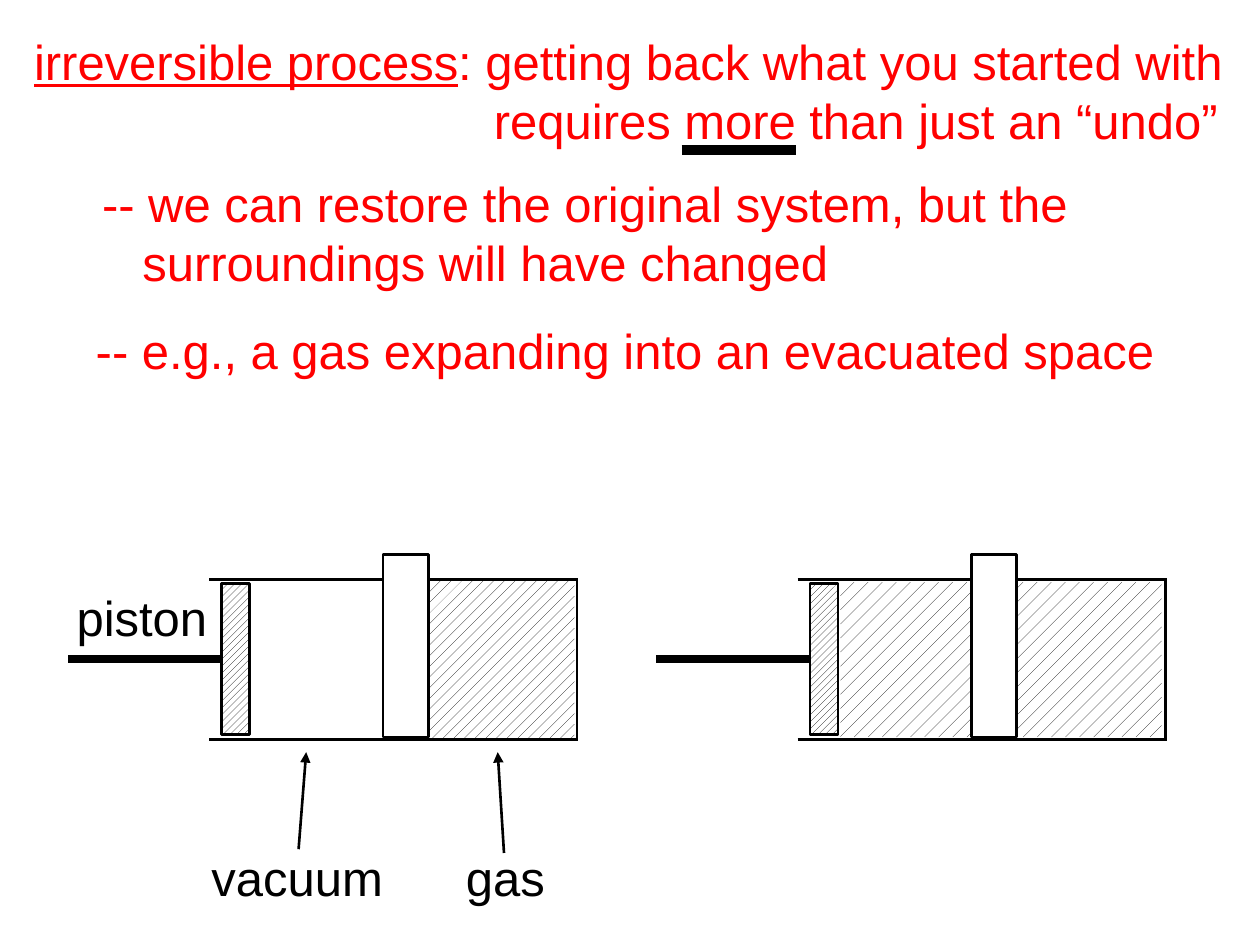
import pptx
import pptx.util
import pptx.dml.color
import pptx.enum.dml
import pptx.enum.shapes
import pptx.enum.text
import pptx.oxml.ns
import lxml.etree

RED = pptx.dml.color.RGBColor(0xFF, 0, 0)
BLACK = pptx.dml.color.RGBColor(0, 0, 0)
WHITE = pptx.dml.color.RGBColor(0xFF, 0xFF, 0xFF)
PATTERN = pptx.enum.dml.MSO_PATTERN
COLUMNS, ROWS = 100, 75
LEFT_CYLINDER, RIGHT_CYLINDER = 5.4, 52.1


def cells(n):
    return pptx.util.Inches(round(n / 10, 3))


def add_xml(parent, tag, **attributes):
    return lxml.etree.SubElement(parent, pptx.oxml.ns.qn(tag), attributes)


def style_run(r, color):
    r.font.name = "Arial"
    r.font.size = pptx.util.Pt(28)
    r.font.color.rgb = color


def fill_placeholder(sp, box, lines):
    sp.left, sp.top, sp.width, sp.height = map(cells, box)
    tf = sp.text_frame
    tf.text = "\n".join(text for text, indent in lines)
    tf.word_wrap = True
    tf.auto_size = pptx.enum.text.MSO_AUTO_SIZE.NONE
    tf.vertical_anchor = pptx.enum.text.MSO_ANCHOR.MIDDLE
    tf.margin_right = 0
    for p, (text, indent) in zip(tf.paragraphs, lines):
        p.alignment = pptx.enum.text.PP_ALIGN.LEFT
        p.space_before = pptx.util.Pt(0)
        pPr = p._p.get_or_add_pPr()
        pPr.set("marL", str(cells(indent)))
        pPr.set("indent", "0")
        add_xml(pPr, "a:buNone")
        for r in p.runs:
            style_run(r, RED)


def add_title(s):
    fill_placeholder(s.shapes.title, (1.7, 2, 96.6, 10.3), [
        ("irreversible process", 0),
        ("requires more than just an “undo”", 36.5)])
    p = s.shapes.title.text_frame.paragraphs[0]
    p.runs[0].font.underline = True
    r = p.add_run()
    r.text = ": getting back what you started with"
    style_run(r, RED)


def add_label(shapes, text, *box):
    tf = shapes.add_textbox(*map(cells, box)).text_frame
    tf.text = text
    tf.word_wrap = False
    style_run(tf.paragraphs[0].runs[0], BLACK)


def add_rect(shapes, box, pattern=None, outlined=True):
    sp = shapes.add_shape(pptx.enum.shapes.MSO_SHAPE.RECTANGLE, *map(cells, box))
    sp.shadow.inherit = False
    if pattern is None:
        sp.fill.solid()
        sp.fill.fore_color.rgb = WHITE
    else:
        sp.fill.patterned()
        sp.fill.pattern = pattern
        sp.fill.fore_color.rgb = BLACK
        sp.fill.back_color.rgb = WHITE
    if outlined:
        sp.line.color.rgb = BLACK
        sp.line.width = pptx.util.Pt(1.5)
    else:
        sp.line.fill.background()
    return sp


def add_line(shapes, ends, width=1.5, arrow=False):
    line = shapes.add_connector(
        pptx.enum.shapes.MSO_CONNECTOR.STRAIGHT, *map(cells, ends))
    line.line.color.rgb = BLACK
    line.line.width = pptx.util.Pt(width)
    if arrow:
        add_xml(line.line._get_or_add_ln(), "a:tailEnd", type="triangle")
    add_xml(line._element.spPr, "a:effectLst")
    return line


def add_cylinder(shapes, left, gas_box, gas_pattern):
    add_rect(shapes, gas_box, gas_pattern, outlined=False)
    piston = add_rect(shapes, (left + 12.2, 46.3, 2.2, 12),
                      PATTERN.WIDE_UPWARD_DIAGONAL)
    rod = add_line(shapes, (left + 12.2, 52.3, left, 52.3), width=5)
    rod.begin_connect(piston, 1)
    for row in (58.7, 46):
        add_line(shapes, (left + 11.2, row, left + 40.5, row))
    add_line(shapes, (left + 40.4, 46, left + 40.4, 58.6))
    add_rect(shapes, (left + 25, 44, 3.6, 14.5))


def main():
    prs = pptx.Presentation()
    prs.slide_width, prs.slide_height = cells(COLUMNS), cells(ROWS)
    s = prs.slides.add_slide(prs.slide_layouts[3])
    add_title(s)
    fill_placeholder(s.placeholders[1], (7.1, 13.3, 78.9, 10.3), [
        ("-- we can restore the original system, but the", 0),
        ("surroundings will have changed", 3.2)])
    fill_placeholder(s.placeholders[2], (6.6, 24.9, 87.3, 5.7), [
        ("-- e.g., a gas expanding into an evacuated space", 0)])

    before = s.shapes.add_group_shape().shapes
    add_cylinder(before, LEFT_CYLINDER, (33.3, 46.1, 12.3, 12.5),
                 PATTERN.PERCENT_20)
    add_label(before, "piston", 5.1, 46.1, 12.4, 5.7)
    add_label(before, "vacuum", 15.8, 66.8, 15.7, 5.7)
    add_label(before, "gas", 36, 66.8, 8.3, 5.7)
    add_line(before, (23.7, 67.4, 24.3, 59.7), arrow=True)
    add_line(before, (40, 67.7, 39.5, 59.7), arrow=True)

    after = s.shapes.add_group_shape().shapes
    add_cylinder(after, RIGHT_CYLINDER, (66.7, 46.2, 25.5, 12.3),
                 PATTERN.PERCENT_10)
    add_line(s.shapes, (54.1, 11.9, 63.2, 11.9), width=6)
    prs.save("out.pptx")


if __name__ == "__main__":
    main()
